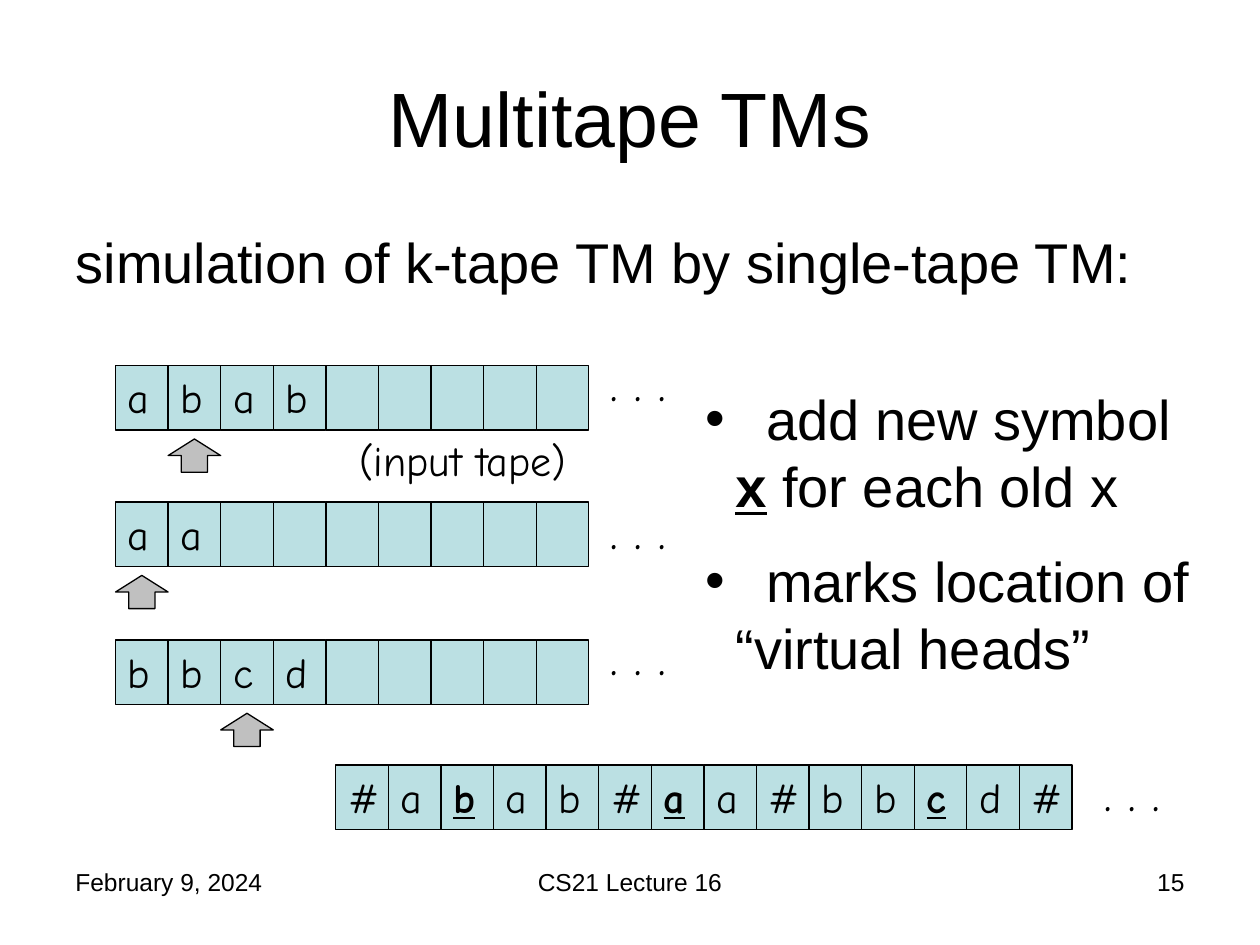
from dataclasses import dataclass

from lxml import etree
from pptx import Presentation
from pptx import util as u
from pptx.dml.color import RGBColor
from pptx.enum import shapes, text
from pptx.oxml import ns


@dataclass(frozen=True)
class Theme:
    ink: RGBColor = RGBColor(0x00, 0x00, 0x00)
    cell: RGBColor = RGBColor(0xBB, 0xE0, 0xE3)
    head: RGBColor = RGBColor(0xC0, 0xC0, 0xC0)
    plain: str = "Arial"
    hand: str = "Comic Neue"
    title: int = 44
    body: int = 32
    dots: int = 28
    symbol: int = 24
    footer: int = 14
    line: float = 0.75


THEME = Theme()
CELL_WIDTH, CELL_HEIGHT = 1.06, 1.3
MARKED = {"bold": True, "underline": True}
ALIGN = text.PP_ALIGN


def set_values(target, values):
    for name, value in values.items():
        setattr(target, name, value)


def place(item, box):
    """Move an item to box: left, top, width, height in centimetres."""
    set_values(item, dict(zip(("left", "top", "width", "height"), map(u.Cm, box))))


def add_span(para, words, size, font, **extra):
    span = para.add_run()
    span.text = words
    set_values(span.font, {"name": font, "size": u.Pt(size), **extra})
    span.font.color.rgb = THEME.ink


def set_frame(item, anchor=text.MSO_ANCHOR.TOP):
    frame = item.text_frame
    set_values(frame, {"word_wrap": True, "vertical_anchor": anchor,
                       "auto_size": text.MSO_AUTO_SIZE.NONE})
    return frame


def add_label(page, box, words, size, font, align=ALIGN.LEFT):
    label = page.shapes.add_textbox(*map(u.Cm, box))
    para = set_frame(label).paragraphs[0]
    para.alignment = align
    add_span(para, words, size, font)


def add_block(page, kind, box, fill):
    block = page.shapes.add_shape(kind, *map(u.Cm, box))
    block.shadow.inherit = False
    block.fill.solid()
    block.fill.fore_color.rgb = fill
    block.line.color.rgb = THEME.ink
    block.line.width = u.Pt(THEME.line)
    return block


def add_tape(page, left, top, symbols, length, marked=()):
    """Draw a row of cells; the symbols at marked places are bold and underlined."""
    for place_number in range(length):
        box = (left + place_number * CELL_WIDTH, top, CELL_WIDTH, CELL_HEIGHT)
        cell = add_block(page, shapes.MSO_SHAPE.RECTANGLE, box, THEME.cell)
        if place_number < len(symbols):
            para = set_frame(cell).paragraphs[0]
            para.alignment = ALIGN.LEFT
            add_span(para, symbols[place_number], THEME.symbol, THEME.hand,
                     **(MARKED if place_number in marked else {}))


def add_head(page, left, top, position):
    box = (left + position * CELL_WIDTH, top + 1.48, CELL_WIDTH, 0.67)
    add_block(page, shapes.MSO_SHAPE.UP_ARROW, box, THEME.head)


def add_dots(page, left, top, width):
    add_label(page, (left, top, width, 1.45), ". . .", THEME.dots, THEME.hand)


def add_multitape(page, left, top):
    tapes = [("abab", 1, 0, -0.38), ("aa", 0, 2.75, -0.15), ("bbcd", 2, 5.53, -0.4)]
    for symbols, position, drop, dots_shift in tapes:
        add_tape(page, left, top + drop, symbols, length=9)
        add_head(page, left, top + drop, position)
        add_dots(page, left + 9.73, top + drop + dots_shift, 4.01)
    add_label(page, (left + 4.66, top + 1.27, 6.56, 1.27), "(input tape)",
              THEME.symbol, THEME.hand)


def add_single_tape(page, left, top):
    symbols = "#abab#aa#bbcd#"
    add_tape(page, left, top, symbols, len(symbols), marked=(2, 6, 11))
    add_dots(page, left + 15.25, top - 0.18, 2.33)


def fill_title(title, box):
    place(title, box)
    para = set_frame(title, text.MSO_ANCHOR.MIDDLE).paragraphs[0]
    para.alignment = ALIGN.CENTER
    add_span(para, "Multitape TMs", THEME.title, THEME.plain)


def fill_statement(body, box):
    place(body, box)
    para = set_frame(body).paragraphs[0]
    etree.SubElement(para._p.get_or_add_pPr(), ns.qn("a:buNone"))
    add_span(para, "simulation of k-tape TM by single-tape TM:", THEME.body, THEME.plain)


def fill_notes_list(body, box):
    """Bulleted list whose first lines start at a tab stop past the hanging indent."""
    place(body, box)
    frame = set_frame(body)
    items = [[("\tadd new symbol ", {}), ("x", MARKED), (" for each old x", {})],
             [("\tmarks location of “virtual heads”", {})]]
    for number, spans in enumerate(items):
        para = frame.add_paragraph() if number else frame.paragraphs[0]
        para.space_before = u.Pt(THEME.body / 2)
        settings = para._p.get_or_add_pPr()
        settings.set("marL", str(u.Cm(0.6)))
        settings.set("indent", str(-u.Cm(0.6)))
        etree.SubElement(settings, ns.qn("a:buChar"), char="•")
        stops = etree.SubElement(settings, ns.qn("a:tabLst"))
        etree.SubElement(stops, ns.qn("a:tab"), pos=str(u.Cm(1.22)), algn="l")
        for words, extra in spans:
            add_span(para, words, THEME.body, THEME.plain, **extra)


def add_footer(page, left, top, width):
    parts = [("February 9, 2024", 0, 5.93, ALIGN.LEFT),
             ("CS21 Lecture 16", (width - 8.04) / 2, 8.04, ALIGN.CENTER),
             ("15", width - 5.93, 5.93, ALIGN.RIGHT)]
    for words, shift, part_width, align in parts:
        add_label(page, (left + shift, top, part_width, 1.32), words,
                  THEME.footer, THEME.plain, align)


def main():
    deck = Presentation()
    set_values(deck, {"slide_width": u.Cm(25.4), "slide_height": u.Cm(19.05)})
    page = deck.slides.add_slide(deck.slide_layouts.get_by_name("Two Content"))
    title, statement, notes_list = page.placeholders
    fill_title(title, (1.27, 0.76, 22.86, 3.18))
    fill_statement(statement, (1.27, 4.45, 22.86, 1.9))
    add_multitape(page, 2.33, 7.37)
    add_single_tape(page, 6.77, 15.42)
    fill_notes_list(notes_list, (13.97, 7.62, 10.36, 6.35))
    add_footer(page, 1.27, 17.36, 22.86)
    deck.save("out.pptx")


if __name__ == "__main__":
    main()
